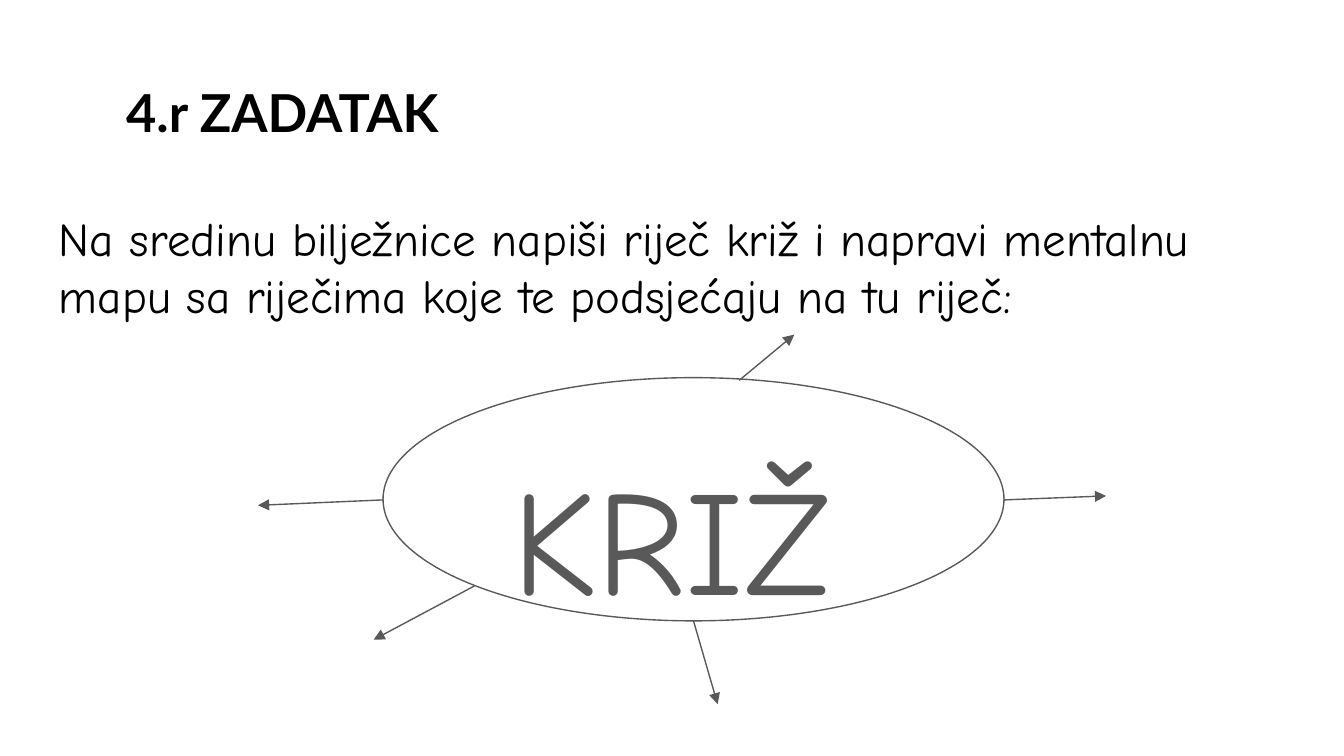
from lxml import etree
from pptx import Presentation
from pptx.dml.color import RGBColor
from pptx.enum import shapes, text
from pptx.oxml import ns
from pptx.util import Inches, Pt

GRAY = "595959"
BLACK = "000000"


def color(value):
    return RGBColor.from_string(value)


def add_text(slide, box, content, font, size, fill, bold=False):
    shape = slide.shapes.add_textbox(*[Inches(length) for length in box])
    frame = shape.text_frame
    frame.word_wrap = True
    frame.vertical_anchor = text.MSO_ANCHOR.TOP
    frame.margin_left = frame.margin_right = Inches(0.1)
    frame.margin_top = frame.margin_bottom = Inches(0.1)
    frame.text = content
    paragraph = frame.paragraphs[0]
    for run in paragraph.runs:
        run.font.name = font
        run.font.size = Pt(size)
        run.font.bold = bold
        run.font.color.rgb = color(fill)
    return paragraph


presentation = Presentation()
presentation.slide_width = Inches(10)
presentation.slide_height = Inches(10) * 9 // 16
slide = presentation.slides.add_slide(presentation.slide_layouts[6])

add_text(
    slide, (0.34, 1.46, 9.32, 1.36),
    "Na sredinu bilježnice napiši riječ križ i napravi mentalnu mapu "
    "sa riječima koje te podsjećaju na tu riječ:",
    "Comic Neue", 25.2, BLACK,
)
keyword = add_text(slide, (0.34, 3.02, 9.32, 1.6), "KRIŽ", "Comic Neue", 80, GRAY)
keyword.alignment = text.PP_ALIGN.CENTER
keyword.line_spacing = 1.15
keyword.space_after = Pt(12)
add_text(slide, (0.84, 0.5, 3.26, 0.67), "4.r ZADATAK", "Lato", 28, BLACK, bold=True)

ellipse = slide.shapes.add_shape(
    shapes.MSO_SHAPE.OVAL, Inches(2.85), Inches(2.81), Inches(4.62), Inches(1.81)
)
ellipse.shadow.inherit = False
ellipse.fill.background()
ellipse.line.color.rgb = color(GRAY)
ellipse.line.width = Pt(0.75)

arrows = [
    (7.47, 3.72, 8.23, 3.69),
    (5.5, 2.83, 5.91, 2.49),
    (2.85, 3.72, 1.92, 3.76),
    (5.16, 4.62, 5.34, 5.24),
    (3.53, 4.36, 2.78, 4.76),
]
for ends in arrows:
    arrow = slide.shapes.add_connector(
        shapes.MSO_CONNECTOR.STRAIGHT, *[Inches(length) for length in ends]
    )
    arrow.line.color.rgb = color(GRAY)
    arrow.line.width = Pt(0.75)
    line = arrow.line._get_or_add_ln()
    etree.SubElement(line, ns.qn("a:tailEnd"), type="triangle")
    etree.SubElement(arrow._element.spPr, ns.qn("a:effectLst"))

presentation.save("out.pptx")
